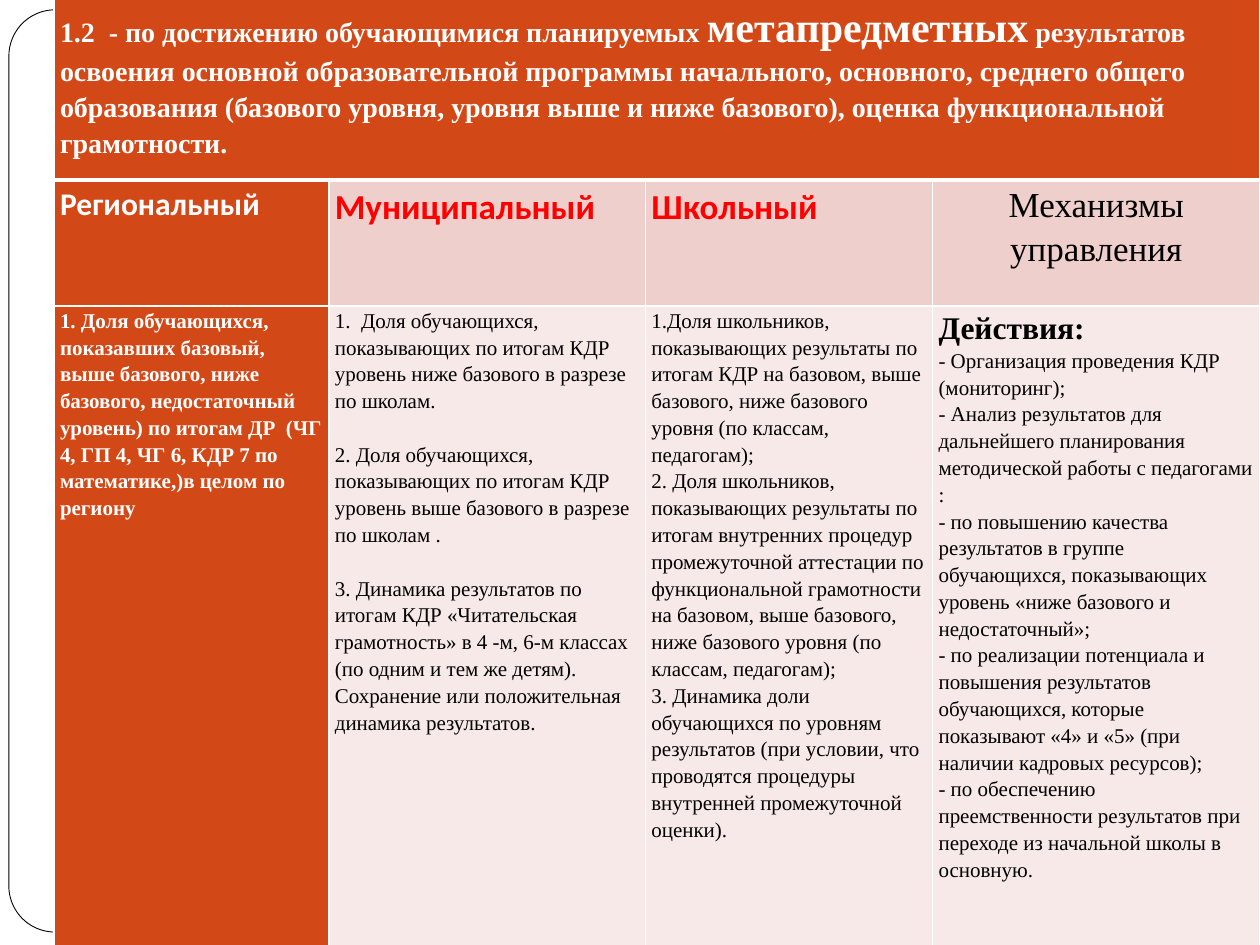
from dataclasses import dataclass

from lxml.etree import Element, SubElement
from pptx import Presentation
from pptx.dml.color import RGBColor
from pptx.enum.shapes import MSO_SHAPE
from pptx.enum.text import PP_ALIGN
from pptx.oxml.ns import qn
from pptx.util import Cm, Pt


@dataclass(frozen=True)
class Theme:
    white: str = "FFFFFF"
    black: str = "000000"
    red: str = "FF0000"
    rust: str = "D34817"
    rose: str = "EFCFCC"
    pale: str = "F7E9E8"
    serif: str = "Times New Roman"
    sans: str = "Calibri"
    body: int = 12
    title: int = 16
    label: int = 18
    head: int = 20
    accent: int = 24
    gap: float = 15.3
    leading: float = 1.15
    thin: float = 1
    thick: float = 3


T = Theme()


@dataclass(frozen=True)
class Run:
    text: str
    size: int = T.body
    color: str = T.black
    bold: bool = False
    font: str = T.serif


@dataclass(frozen=True)
class Para:
    runs: tuple[Run, ...]
    align: PP_ALIGN = PP_ALIGN.LEFT
    gap: float = 0


@dataclass(frozen=True)
class Box:
    fill: str
    paras: tuple[Para, ...] = ()


def plain(*texts: str, gap: float = 0) -> tuple[Para, ...]:
    return tuple(Para((Run(text),), gap=gap if i else 0) for i, text in enumerate(texts))


def single(run: Run, align: PP_ALIGN = PP_ALIGN.LEFT) -> tuple[Para, ...]:
    return (Para((run,), align),)


COLS = (5.54, 6.38, 5.79, 6.6)
ROWS = (3.66, 2.54, 13.16)

TITLE = Box(T.rust, (Para((
    Run("1.2  - по достижению обучающимися планируемых ", T.title, T.white, True),
    Run("метапредметных", T.accent, T.white, True),
    Run(" результатов освоения основной образовательной программы начального, "
        "основного, среднего общего образования (базового уровня, уровня выше и "
        "ниже базового), оценка функциональной грамотности.", T.title, T.white, True),
)),))

HEADS = (
    Box(T.rust, single(Run("Региональный", T.label, T.white, True, T.sans))),
    Box(T.rose, single(Run("Муниципальный", T.head, T.red, True, T.sans))),
    Box(T.rose, single(Run("Школьный", T.head, T.red, True, T.sans))),
    Box(T.rose, single(Run("Механизмы управления", T.head), PP_ALIGN.CENTER)),
)

BODY = (
    Box(T.rust, single(Run(
        "1. Доля обучающихся, показавших базовый, выше базового, ниже базового, "
        "недостаточный уровень) по итогам ДР  (ЧГ 4, ГП 4, ЧГ 6, КДР 7 по "
        "математике,)в целом по региону", color=T.white, bold=True))),
    Box(T.pale, plain(
        "1.  Доля обучающихся, показывающих по итогам КДР уровень ниже базового "
        "в разрезе по школам.",
        "2. Доля обучающихся, показывающих по итогам КДР уровень выше базового "
        "в разрезе по школам .",
        "3. Динамика результатов по итогам КДР «Читательская грамотность» в 4 -м, "
        "6-м классах (по одним и тем же детям). Сохранение или положительная "
        "динамика результатов.",
        gap=T.gap)),
    Box(T.pale, plain(
        "1.Доля школьников, показывающих результаты по итогам КДР на базовом, "
        "выше базового, ниже базового уровня (по классам, педагогам);",
        "2. Доля школьников, показывающих результаты по итогам внутренних процедур "
        "промежуточной аттестации по функциональной грамотности",
        "на базовом, выше базового, ниже базового уровня (по классам, педагогам);",
        "3. Динамика доли обучающихся по уровням результатов (при условии, что "
        "проводятся процедуры внутренней промежуточной оценки).")),
    Box(T.pale, single(Run("Действия:", T.label, bold=True)) + plain(
        "- Организация проведения КДР (мониторинг);",
        "- Анализ результатов для дальнейшего планирования методической работы "
        "с педагогами :",
        "- по повышению качества результатов в группе обучающихся, показывающих "
        "уровень «ниже базового и недостаточный»;",
        "- по реализации потенциала и повышения результатов обучающихся, которые "
        "показывают «4» и «5» (при наличии кадровых ресурсов);",
        "- по обеспечению преемственности результатов при переходе из начальной "
        "школы в основную.")),
)


def rgb(color: str) -> RGBColor:
    return RGBColor.from_string(color)


def write(frame, paras: tuple[Para, ...]) -> None:
    for i, para in enumerate(paras):
        line = frame.add_paragraph() if i else frame.paragraphs[0]
        line.alignment = para.align
        line.line_spacing = T.leading
        line.space_before = Pt(para.gap)
        for item in para.runs:
            run = line.add_run()
            run.text = item.text
            run.font.size = Pt(item.size)
            run.font.name = item.font
            run.font.bold = item.bold
            run.font.color.rgb = rgb(item.color)


def border(cell, top: float, bottom: float) -> None:
    props = cell._tc.get_or_add_tcPr()
    sides = {"lnL": T.thin, "lnR": T.thin, "lnT": top, "lnB": bottom}
    for i, (side, width) in enumerate(sides.items()):
        line = Element(qn(f"a:{side}"), w=str(Pt(width)))
        fill = SubElement(line, qn("a:solidFill"))
        SubElement(fill, qn("a:srgbClr"), val=T.white)
        props.insert(i, line)


def paint(cell, box: Box, row: int) -> None:
    cell.margin_left = cell.margin_right = Cm(0.12)
    cell.margin_top = cell.margin_bottom = 0
    cell.fill.solid()
    cell.fill.fore_color.rgb = rgb(box.fill)
    border(cell, T.thick if row == 1 else T.thin, T.thick if row == 0 else T.thin)
    write(cell.text_frame, box.paras)


def frame(slide) -> None:
    card = slide.shapes.add_shape(
        MSO_SHAPE.ROUNDED_RECTANGLE, Cm(0.18), Cm(0.2), Cm(25.04), Cm(18.59))
    card.adjustments[0] = 0.05
    card.shadow.inherit = False
    card.fill.solid()
    card.fill.fore_color.rgb = rgb(T.white)
    card.line.color.rgb = rgb(T.black)
    card.line.width = Pt(0.5)


def grid(slide) -> None:
    table = slide.shapes.add_table(
        len(ROWS), len(COLS), Cm(1.09), Cm(-0.03), Cm(sum(COLS)), Cm(sum(ROWS))).table
    table.first_row = table.horz_banding = False
    for col, width in zip(table.columns, COLS):
        col.width = Cm(width)
    for row, height in zip(table.rows, ROWS):
        row.height = Cm(height)
    table.cell(0, 0).merge(table.cell(0, len(COLS) - 1))
    top = (TITLE,) + (Box(T.rust),) * (len(COLS) - 1)
    for r, boxes in enumerate((top, HEADS, BODY)):
        for c, box in enumerate(boxes):
            paint(table.cell(r, c), box, r)


def main() -> None:
    deck = Presentation()
    deck.slide_width, deck.slide_height = Cm(25.4), Cm(19.05)
    slide = deck.slides.add_slide(deck.slide_layouts[6])
    frame(slide)
    grid(slide)
    deck.save("out.pptx")


if __name__ == "__main__":
    main()
